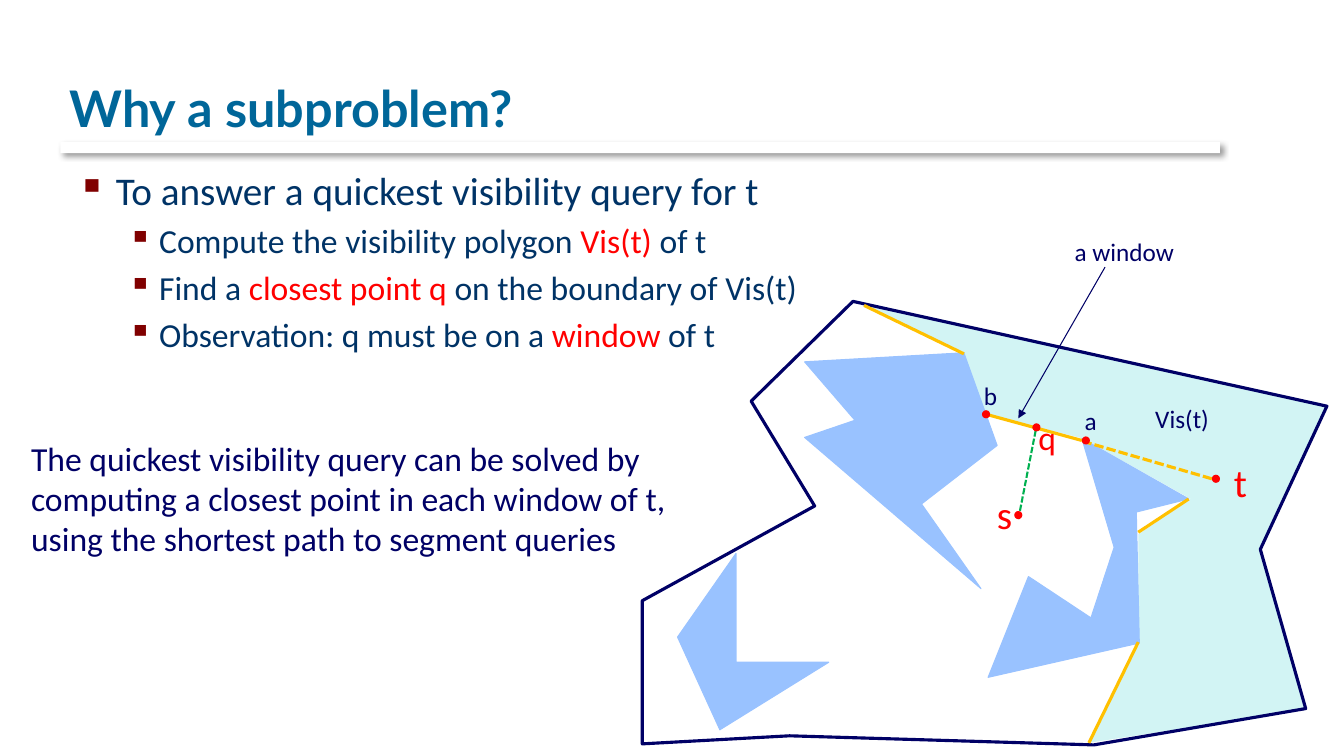
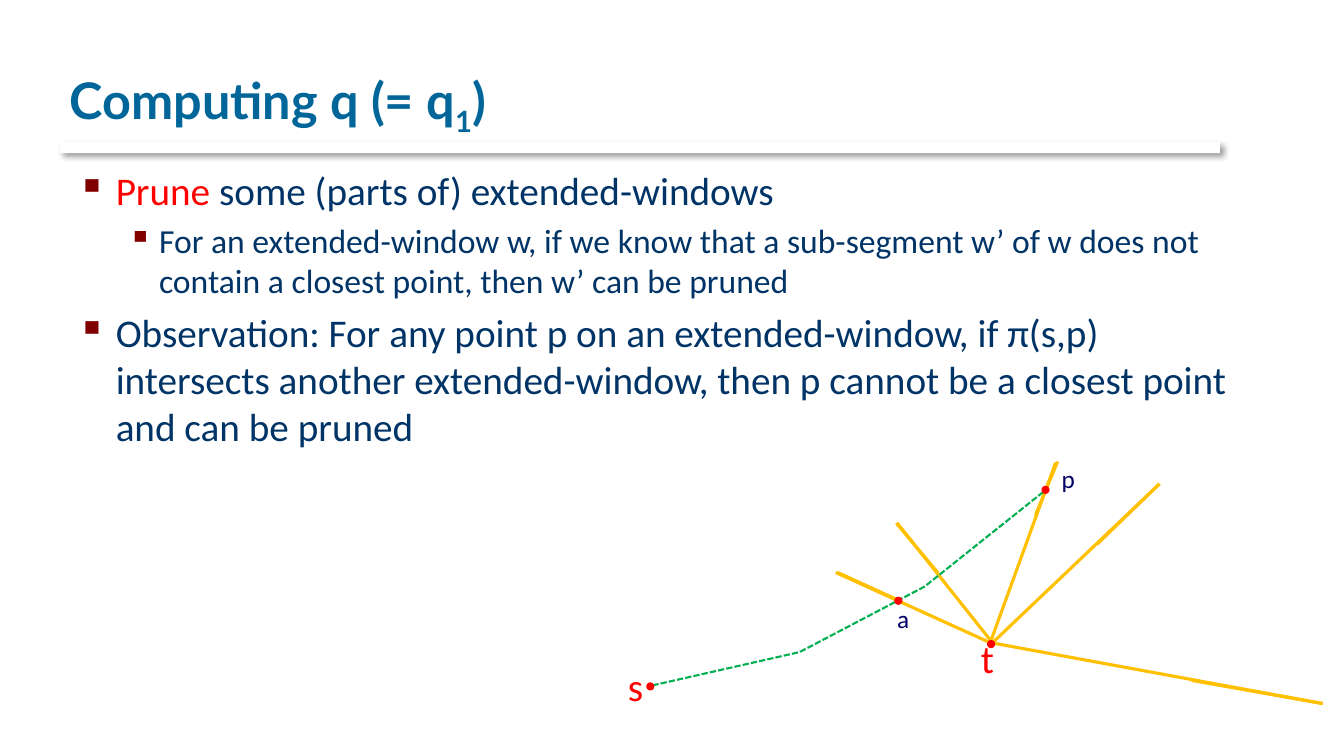
from dataclasses import dataclass

from lxml import etree
from pptx import Presentation
from pptx import util as u
from pptx.dml.color import RGBColor
from pptx.enum import dml, shapes, text
from pptx.oxml.ns import qn


@dataclass(frozen=True)
class Theme:
    title: str = "006699"
    body: str = "003366"
    ink: str = "000066"
    accent: str = "FF0000"
    bullet: str = "800000"
    obstacle: str = "99C2FF"
    visible: str = "D2F4F4"
    window: str = "FFC000"
    route: str = "00B050"
    white: str = "FFFFFF"
    shadow: str = "000000"
    title_font: str = "Lato"
    body_font: str = "Calibri"
    title_size: int = 36
    large: int = 28
    medium: int = 24
    small: int = 18
    thin: float = 0.75
    dashed: float = 1.5
    thick: float = 2.25
    dot: float = 0.07


THEME = Theme()
LEVELS = [
    {"size": THEME.large, "left": 0.38, "hang": 0.38},
    {"size": THEME.medium, "left": 0.81, "hang": 0.31},
]

SUBPROBLEM = {
    "title": [("Why a subproblem?", None)],
    "bullets": [
        (0, [("To answer a quickest visibility query for t", None)]),
        (1, [("Compute the visibility polygon ", None), ("Vis(t)", "accent"), (" of t", None)]),
        (1, [("Find a ", None), ("closest point q", "accent"),
             (" on the boundary of Vis(t)", None)]),
        (1, [("Observation: q must be on a ", None), ("window", "accent"), (" of t", None)]),
    ],
    "areas": [
        ([(10.79, 7.37), (12.96, 7.04), (12.5, 5.45), (13.17, 4.02), (8.48, 2.98), (9.55, 3.51),
          (9.78, 4.11), (10.74, 4.35), (11.81, 4.95), (11.29, 5.3), (11.29, 6.38)],
         THEME.visible, None, 0),
        ([(7.45, 3.98), (8.46, 2.99), (13.16, 4.03), (12.5, 5.45), (12.95, 7.03), (10.85, 7.39),
          (7.83, 7.3), (6.37, 7.38), (6.37, 5.96), (8.08, 5.02)],
         None, THEME.ink, THEME.thick),
        ([(10.73, 4.35), (11.05, 5.43), (10.82, 6.13), (10.2, 5.72), (9.8, 6.72), (11.3, 6.38),
          (11.27, 5.08), (11.79, 4.95)],
         THEME.obstacle, THEME.obstacle, THEME.thin),
        ([(9.56, 3.5), (7.98, 3.59), (8.48, 4.17), (7.98, 4.34), (9.73, 5.84), (9.14, 5),
          (9.89, 4.42)],
         THEME.obstacle, THEME.obstacle, THEME.thin),
        ([(7.3, 5.49), (6.72, 6.32), (7.14, 7.24), (8.22, 6.57), (7.3, 6.57)],
         THEME.obstacle, THEME.obstacle, THEME.thin),
    ],
    "windows": [
        ((10.73, 4.37), (9.78, 4.11)),
        ((9.56, 3.51), (8.57, 3.03)),
        ((10.8, 7.37), (11.29, 6.37)),
        ((11.29, 5.28), (11.79, 4.95)),
    ],
    "sight": ((12.02, 4.75), (10.78, 4.39)),
    "pointer": ((10.96, 2.65), (10.1, 4.15)),
    "route": [(10.1, 5.15), (10.28, 4.23)],
    "dots": [(12.06, 4.75), (10.1, 5.11), (10.28, 4.24), (10.77, 4.37), (9.78, 4.11)],
    "labels": [
        (["s"], (9.79, 4.82, 0.27, 0.57), THEME.large, THEME.accent),
        (["t"], (12.14, 4.5, 0.27, 0.57), THEME.large, THEME.accent),
        (["q"], (10.2, 4.09, 0.27, 0.5), THEME.medium, THEME.accent),
        (["a"], (10.66, 3.97, 0.31, 0.4), THEME.small, THEME.ink),
        (["b"], (9.66, 3.72, 0.33, 0.4), THEME.small, THEME.ink),
        (["a window"], (10.56, 2.3, 1.19, 0.4), THEME.small, THEME.ink),
        (["Vis(t)"], (11.36, 3.95, 0.76, 0.4), THEME.small, THEME.ink),
        (["The quickest visibility query can be solved by",
          "computing a closest point in each window of t,",
          "using the shortest path to segment queries"],
         (0.21, 4.29, 6.62, 1.31), THEME.medium, THEME.ink),
    ],
}

COMPUTING = {
    "title": [("Computing q (= q", None), ("1", "subscript"), (")", None)],
    "bullets": [
        (0, [("Prune", "accent"), (" some (parts of) extended-windows", None)]),
        (1, [("For an extended-window w, if we know that a sub-segment w’ of w does not "
              "contain a closest point, then w’ can be pruned", None)]),
        (0, [("Observation: For any point p on an extended-window, if π(s,p) intersects "
              "another extended-window, then p cannot be a closest point and can be pruned",
              None)]),
    ],
    "windows": [
        ((9.83, 6.38), (8.29, 5.68)),
        ((9.83, 6.36), (8.9, 5.19)),
        ((9.82, 6.38), (10.47, 4.59)),
        ((9.83, 6.39), (11.5, 4.8)),
        ((9.85, 6.38), (13.12, 6.98)),
        ((11.82, 6.75), (13.12, 6.98)),
        ((10.88, 5.4), (11.5, 4.8)),
        ((10.27, 5.11), (10.49, 4.58)),
        ((9.3, 5.68), (8.89, 5.19)),
        ((8.9, 5.95), (8.31, 5.68)),
    ],
    "route": [(6.47, 6.8), (7.93, 6.47), (9.17, 5.82), (10.36, 4.87)],
    "dots": [(6.45, 6.81), (9.83, 6.39), (10.37, 4.86), (8.91, 5.96)],
    "labels": [
        (["s"], (6.13, 6.52, 0.27, 0.57), THEME.large, THEME.accent),
        (["t"], (9.63, 6.24, 0.26, 0.57), THEME.large, THEME.accent),
        (["p"], (10.43, 4.55, 0.38, 0.4), THEME.small, THEME.ink),
        (["a"], (8.8, 5.94, 0.31, 0.4), THEME.small, THEME.ink),
    ],
}


def inches(values):
    return [u.Inches(value) for value in values]


def rgb(colour):
    return RGBColor.from_string(colour)


def add_xml(parent, tag, **attributes):
    return etree.SubElement(parent, qn(tag), attributes)


def set_font(font, name, size, colour, bold=False):
    font.name, font.size, font.bold = name, u.Pt(size), bold
    font.color.rgb = rgb(colour)


def add_spans(para, spans):
    for words, mark in spans:
        span = para.add_run()
        span.text = words
        if mark == "accent":
            span.font.color.rgb = rgb(THEME.accent)
        elif mark == "subscript":
            span._r.get_or_add_rPr().set("baseline", "-25000")


def set_line(line, colour, width, dashed=False):
    line.color.rgb = rgb(colour)
    line.width = u.Pt(width)
    if dashed:
        line.dash_style = dml.MSO_LINE.SQUARE_DOT


def set_look(shape, fill, colour, width, dashed=False):
    shape.shadow.inherit = False
    if fill:
        shape.fill.solid()
        shape.fill.fore_color.rgb = rgb(fill)
    else:
        shape.fill.background()
    if colour:
        set_line(shape.line, colour, width, dashed)
    else:
        shape.line.fill.background()


def add_outline(page, points, fill, colour, width, closed=True, dashed=False):
    corners = [inches(point) for point in points]
    builder = page.shapes.build_freeform(*corners[0], scale=1.0)
    builder.add_line_segments(corners[1:], close=closed)
    set_look(builder.convert_to_shape(), fill, colour, width, dashed)


def add_segment(page, ends, colour, width, dashed=False, arrow=False):
    start, end = ends
    segment = page.shapes.add_connector(
        shapes.MSO_CONNECTOR.STRAIGHT, *inches(start + end))
    set_line(segment.line, colour, width, dashed)
    properties = segment._element.spPr
    if arrow:
        add_xml(properties.find(qn("a:ln")), "a:tailEnd", type="triangle")
    add_xml(properties, "a:effectLst")


def add_dot(page, centre):
    corner = [value - THEME.dot / 2 for value in centre]
    dot = page.shapes.add_shape(
        shapes.MSO_SHAPE.OVAL, *inches(corner + [THEME.dot, THEME.dot]))
    set_look(dot, THEME.accent, THEME.accent, THEME.thin)


def add_paragraphs(page, place, count):
    frame = page.shapes.add_textbox(*inches(place)).text_frame
    frame.word_wrap = True
    for _ in range(count - 1):
        frame.add_paragraph()
    return frame.paragraphs


def add_label(page, lines, place, size, colour):
    for para, words in zip(add_paragraphs(page, place, len(lines)), lines):
        para.text = words
        set_font(para.font, THEME.body_font, size, colour)


def add_bullets(page, bullets):
    paragraphs = add_paragraphs(page, (0.67, 1.6, 11.77, 2.57), len(bullets))
    for para, (depth, spans) in zip(paragraphs, bullets):
        level = LEVELS[depth]
        para.level = depth
        properties = para._p.get_or_add_pPr()
        properties.set("marL", str(u.Inches(level["left"])))
        properties.set("indent", str(-u.Inches(level["hang"])))
        add_xml(add_xml(properties, "a:buClr"), "a:srgbClr", val=THEME.bullet)
        add_xml(properties, "a:buChar", char="▪")
        para.space_before = u.Pt(level["size"] * 0.2)
        set_font(para.font, THEME.body_font, level["size"], THEME.body)
        add_spans(para, spans)


def add_title(page, spans):
    title = page.shapes.title
    title.left, title.top, title.width, title.height = inches((0.59, 0.17, 11.33, 1.25))
    title.text_frame.vertical_anchor = text.MSO_ANCHOR.BOTTOM
    para = title.text_frame.paragraphs[0]
    para.alignment = text.PP_ALIGN.LEFT
    set_font(para.font, THEME.title_font, THEME.title_size, THEME.title, bold=True)
    add_spans(para, spans)


def add_title_rule(page):
    rule = page.shapes.add_shape(
        shapes.MSO_SHAPE.RECTANGLE, *inches((0.6, 1.41, 11.5, 0.11)))
    set_look(rule, THEME.white, None, 0)
    effects = rule._element.spPr.find(qn("a:effectLst"))
    shadow = add_xml(effects, "a:outerShdw", blurRad=str(u.Pt(4)), dist=str(u.Pt(3)),
                     dir="2700000", algn="ctr", rotWithShape="0")
    tint = add_xml(shadow, "a:srgbClr", val=THEME.shadow)
    add_xml(tint, "a:alpha", val="40000")


def add_page(deck, content):
    page = deck.slides.add_slide(deck.slide_layouts[5])
    add_title_rule(page)
    add_title(page, content["title"])
    for area in content.get("areas", []):
        add_outline(page, *area)
    add_bullets(page, content["bullets"])
    for ends in content["windows"]:
        add_segment(page, ends, THEME.window, THEME.thick)
    if "sight" in content:
        add_segment(page, content["sight"], THEME.window, THEME.thick, dashed=True)
    if "pointer" in content:
        add_segment(page, content["pointer"], THEME.ink, THEME.thin, arrow=True)
    add_outline(page, content["route"], None, THEME.route, THEME.dashed,
                closed=False, dashed=True)
    for centre in content["dots"]:
        add_dot(page, centre)
    for label in content["labels"]:
        add_label(page, *label)


def main():
    deck = Presentation()
    deck.slide_width, deck.slide_height = inches((13.33, 7.5))
    for content in (SUBPROBLEM, COMPUTING):
        add_page(deck, content)
    deck.save("out.pptx")


if __name__ == "__main__":
    main()
